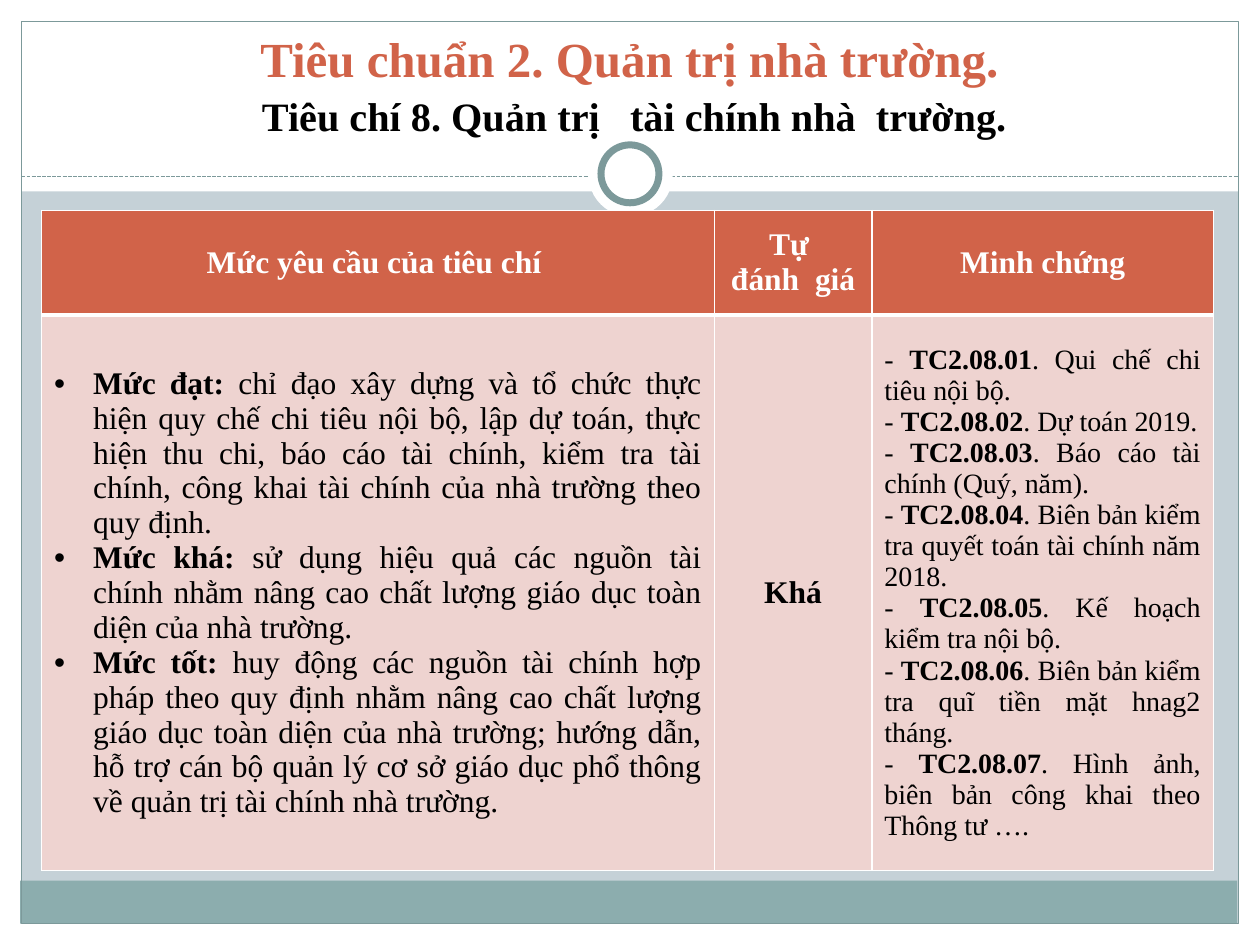
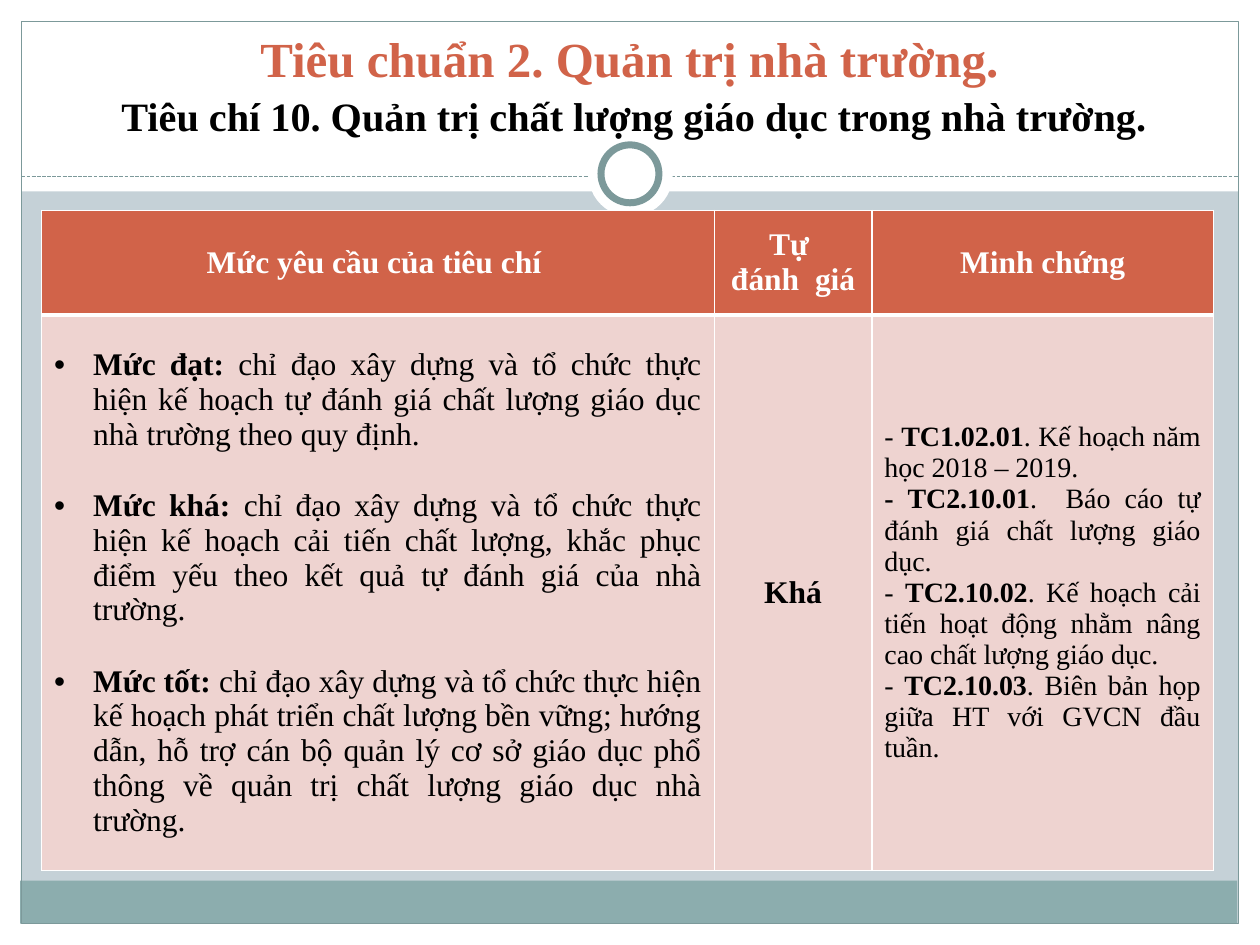
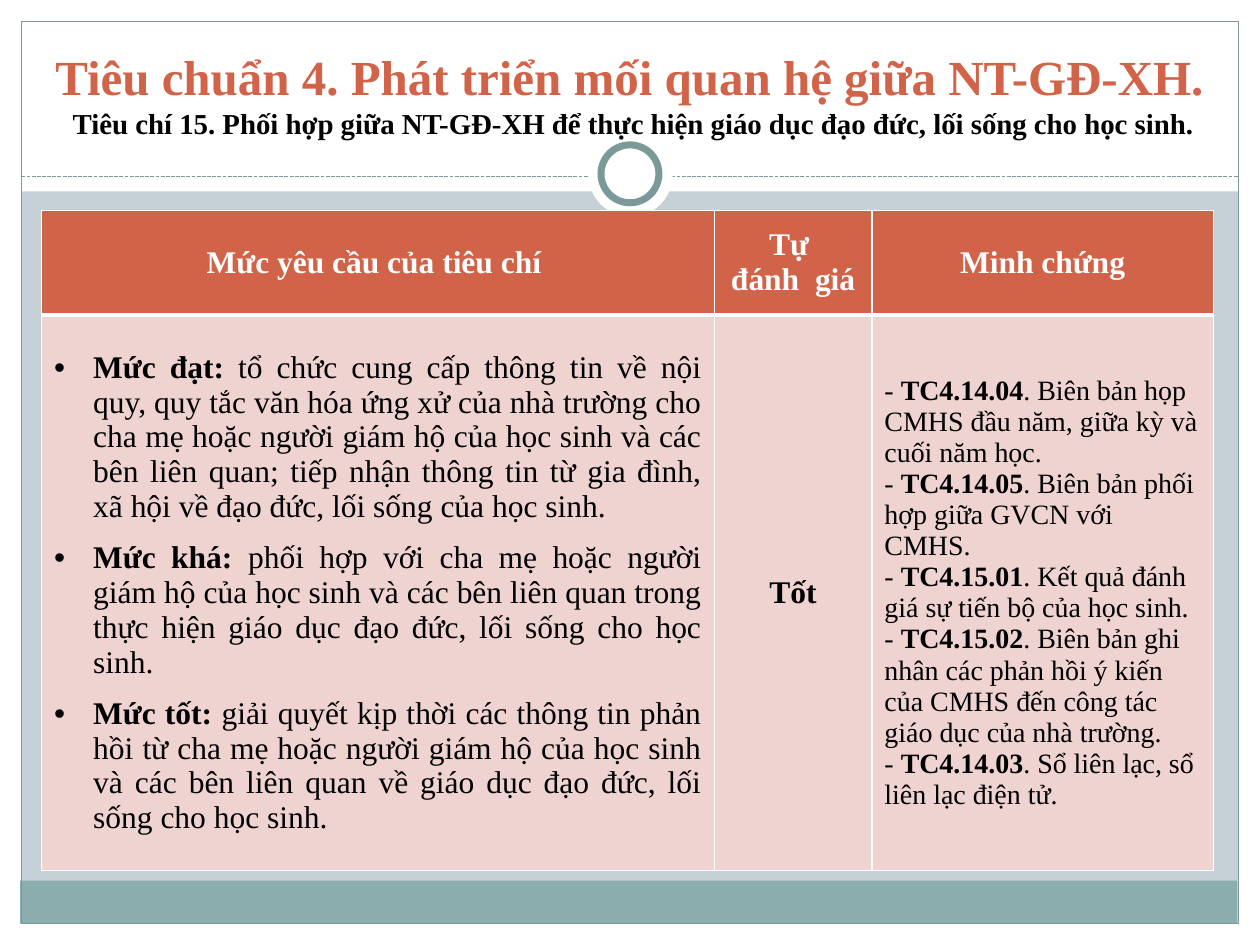
import copy
from dataclasses import dataclass

import pptx
import pptx.dml.color
import pptx.enum.dml
import pptx.enum.shapes
import pptx.enum.text
import pptx.oxml.ns
import pptx.oxml.xmlchemy
import pptx.presentation
import pptx.slide
import pptx.table
import pptx.text.text
import pptx.util

Inches = pptx.util.Inches
Pt = pptx.util.Pt
RGBColor = pptx.dml.color.RGBColor
Align = pptx.enum.text.PP_ALIGN
Preset = pptx.enum.shapes.MSO_SHAPE
OxmlElement = pptx.oxml.xmlchemy.OxmlElement
qn = pptx.oxml.ns.qn

FONT = "Times New Roman"
WHITE = RGBColor(0xFF, 0xFF, 0xFF)
BLACK = RGBColor(0x00, 0x00, 0x00)
ORANGE = RGBColor(0xD1, 0x63, 0x49)
PINK = RGBColor(0xEE, 0xD3, 0xD0)
BACKDROP = RGBColor(0xC5, 0xD1, 0xD7)
TEAL = RGBColor(0x8C, 0xAD, 0xAE)
DARK_TEAL = RGBColor(0x7C, 0x99, 0x9A)

SLIDE_W, SLIDE_H = 10, 7.5
EDGE = 0.17
RULE_Y = 1.4
COLUMN_WIDTHS = (5.34, 1.25, 2.71)
ROW_HEIGHTS = (0.83, 4.41)
HEADINGS = (["Mức yêu cầu của tiêu chí "], ["Tự ", "đánh  giá"], ["Minh chứng"])
LEVEL_NAMES = ("Mức đạt: ", "Mức khá: ", "Mức tốt: ")
BULLET_INDENT = Inches(0.31)
THIN, THICK = 1, 3


@dataclass(frozen=True)
class Decoration:
    left: float
    top: float
    width: float
    height: float
    fill: RGBColor | None = WHITE
    line_width: float = 0
    preset: pptx.enum.shapes.MSO_SHAPE = Preset.RECTANGLE


@dataclass(frozen=True)
class Evidence:
    code: str
    description: str
    bold_dash: bool = False


@dataclass(frozen=True)
class Criterion:
    standard: str
    name: str
    name_size: float
    lead_size: float
    levels: tuple[str, str, str]
    level_gap: float
    rating: str
    evidence: tuple[Evidence, ...]
    evidence_align: pptx.enum.text.PP_ALIGN = Align.JUSTIFY


BANDS = (
    Decoration(0, SLIDE_H - EDGE, SLIDE_W, EDGE),
    Decoration(0, 0, SLIDE_W, 1.52),
    Decoration(0, 0, EDGE, SLIDE_H),
    Decoration(SLIDE_W - EDGE, 0, EDGE, SLIDE_H),
    Decoration(0.16, 6.99, 9.66, 0.34, TEAL),
    Decoration(EDGE, EDGE, SLIDE_W - 2 * EDGE, SLIDE_H - 2 * EDGE, None, 0.75),
)
RING = (
    Decoration(4.67, 1.05, 0.67, 0.67, preset=Preset.OVAL),
    Decoration(4.77, 1.15, 0.46, 0.46, line_width=4, preset=Preset.OVAL),
)

CRITERIA = (
    Criterion(
        "Tiêu chuẩn 2. Quản trị nhà trường.",
        "Tiêu chí 8. Quản trị   tài chính nhà  trường.",
        23, 25,
        (
            "chỉ đạo xây dựng và tổ chức thực hiện quy chế chi tiêu nội bộ, lập dự toán, "
            "thực hiện thu chi, báo cáo tài chính, kiểm tra tài chính, công khai tài chính "
            "của nhà trường theo quy định.",
            "sử dụng hiệu quả các nguồn tài chính nhằm nâng cao chất lượng giáo dục "
            "toàn diện của nhà trường.",
            "huy động các nguồn tài chính hợp pháp theo quy định nhằm nâng cao chất lượng "
            "giáo dục toàn diện của nhà trường; hướng dẫn, hỗ trợ cán bộ quản lý cơ sở "
            "giáo dục phổ thông về quản trị tài chính nhà trường.",
        ),
        0, "Khá",
        (
            Evidence("TC2.08.01", "Qui chế chi tiêu nội bộ."),
            Evidence("TC2.08.02", "Dự toán 2019."),
            Evidence("TC2.08.03", "Báo cáo tài chính (Quý, năm)."),
            Evidence("TC2.08.04", "Biên bản kiểm tra quyết toán tài chính năm 2018."),
            Evidence("TC2.08.05", "Kế hoạch kiểm tra nội bộ."),
            Evidence("TC2.08.06", "Biên bản kiểm tra quĩ tiền mặt hnag2 tháng."),
            Evidence("TC2.08.07", "Hình ảnh, biên bản công khai theo Thông tư …."),
        ),
    ),
    Criterion(
        "Tiêu chuẩn 2. Quản trị nhà trường.",
        "Tiêu chí 10. Quản trị chất lượng giáo dục trong nhà trường.",
        23, 25,
        (
            "chỉ đạo xây dựng và tổ chức thực hiện kế hoạch tự đánh giá chất lượng "
            "giáo dục nhà trường theo quy định.",
            "chỉ đạo xây dựng và tổ chức thực hiện kế hoạch cải tiến chất lượng, khắc phục "
            "điểm yếu theo kết quả tự đánh giá của nhà trường.",
            "chỉ đạo xây dựng và tổ chức thực hiện kế hoạch phát triển chất lượng bền vững; "
            "hướng dẫn, hỗ trợ cán bộ quản lý cơ sở giáo dục phổ thông về quản trị "
            "chất lượng giáo dục nhà trường.",
        ),
        20.7, "Khá",
        (
            Evidence("TC1.02.01", "Kế hoạch năm học 2018 – 2019."),
            Evidence("TC2.10.01", " Báo cáo tự đánh giá chất lượng giáo dục.", bold_dash=True),
            Evidence("TC2.10.02", "Kế hoạch cải tiến hoạt động nhằm nâng cao chất lượng giáo dục."),
            Evidence("TC2.10.03", "Biên bản họp giữa HT với GVCN đầu tuần."),
        ),
    ),
    Criterion(
        "Tiêu chuẩn 4. Phát triển mối quan hệ giữa NT-GĐ-XH.",
        "Tiêu chí 15. Phối hợp giữa NT-GĐ-XH để thực hiện giáo dục đạo đức, "
        "lối sống cho học sinh.",
        16.5, 16.5,
        (
            "tổ chức cung cấp thông tin về nội quy, quy tắc văn hóa ứng xử của nhà trường "
            "cho cha mẹ hoặc người giám hộ của học sinh và các bên liên quan; tiếp nhận "
            "thông tin từ gia đình, xã hội về đạo đức, lối sống của học sinh.",
            "phối hợp với cha mẹ hoặc người giám hộ của học sinh và các bên liên quan "
            "trong thực hiện giáo dục đạo đức, lối sống cho học sinh.",
            "giải quyết kịp thời các thông tin phản hồi từ cha mẹ hoặc người giám hộ của "
            "học sinh và các bên liên quan về giáo dục đạo đức, lối sống cho học sinh.",
        ),
        9.2, "Tốt",
        (
            Evidence("TC4.14.04", "Biên bản họp CMHS đầu năm, giữa kỳ và cuối năm học."),
            Evidence("TC4.14.05", "Biên bản phối hợp giữa GVCN với CMHS."),
            Evidence("TC4.15.01", "Kết quả đánh giá sự tiến bộ của học sinh."),
            Evidence("TC4.15.02", "Biên bản ghi nhân các phản hồi ý kiến của CMHS "
                     "đến công tác giáo dục của nhà trường."),
            Evidence("TC4.14.03", "Sổ liên lạc, sổ liên lạc điện tử."),
        ),
        Align.LEFT,
    ),
)


def add_text(paragraph: pptx.text.text._Paragraph, text: str, *, size: float = 18,
             bold: bool = False, color: RGBColor = BLACK) -> None:
    run = paragraph.add_run()
    run.text = text
    run.font.name = FONT
    run.font.size = Pt(size)
    run.font.bold = bold
    run.font.color.rgb = color


def next_paragraph(frame: pptx.text.text.TextFrame, index: int,
                   align: pptx.enum.text.PP_ALIGN) -> pptx.text.text._Paragraph:
    paragraph = frame.add_paragraph() if index else frame.paragraphs[0]
    paragraph.alignment = align
    return paragraph


def draw_decoration(slide: pptx.slide.Slide, part: Decoration) -> None:
    shape = slide.shapes.add_shape(part.preset, Inches(part.left), Inches(part.top),
                                   Inches(part.width), Inches(part.height))
    shape.shadow.inherit = False
    if part.fill is None:
        shape.fill.background()
    else:
        shape.fill.solid()
        shape.fill.fore_color.rgb = part.fill
    if part.line_width:
        shape.line.color.rgb = DARK_TEAL
        shape.line.width = Pt(part.line_width)
    else:
        shape.line.fill.background()


def draw_dashed_rule(slide: pptx.slide.Slide) -> None:
    rule = slide.shapes.add_connector(
        pptx.enum.shapes.MSO_CONNECTOR.STRAIGHT,
        Inches(EDGE), Inches(RULE_Y), Inches(SLIDE_W - EDGE), Inches(RULE_Y))
    rule.line.color.rgb = DARK_TEAL
    rule.line.width = Pt(0.75)
    rule.line.dash_style = pptx.enum.dml.MSO_LINE.SQUARE_DOT
    rule.element.spPr.append(OxmlElement("a:effectLst"))


def draw_frame(slide: pptx.slide.Slide) -> None:
    slide.background.fill.solid()
    slide.background.fill.fore_color.rgb = BACKDROP
    for band in BANDS:
        draw_decoration(slide, band)
    draw_dashed_rule(slide)
    for circle in RING:
        draw_decoration(slide, circle)


def write_title(slide: pptx.slide.Slide, criterion: Criterion) -> None:
    title = slide.shapes.title
    slide.shapes.element.append(title.element)  # in front of the white band
    title.left, title.top = Inches(0.33), Inches(0.08)
    title.width, title.height = Inches(9.33), Inches(1.08)
    frame = title.text_frame
    frame.word_wrap = True
    frame.auto_size = pptx.enum.text.MSO_AUTO_SIZE.NONE
    frame.vertical_anchor = pptx.enum.text.MSO_ANCHOR.BOTTOM
    heading = next_paragraph(frame, 0, Align.CENTER)
    add_text(heading, criterion.standard, size=28, bold=True, color=ORANGE)
    heading.add_line_break()
    line_break = next(title.element.iter(qn("a:br")))
    line_break.append(copy.deepcopy(line_break.getprevious().find(qn("a:rPr"))))
    add_text(heading, " ", size=criterion.lead_size, bold=True, color=ORANGE)
    add_text(heading, criterion.name, size=criterion.name_size, bold=True)


def style_cell(cell: pptx.table._Cell, fill: RGBColor, top: float, bottom: float) -> None:
    """Set the fill, the white borders and the middle anchor."""
    cell.vertical_anchor = pptx.enum.text.MSO_ANCHOR.MIDDLE
    properties = cell._tc.get_or_add_tcPr()
    for side, width in (("L", THIN), ("R", THIN), ("T", top), ("B", bottom)):
        border = OxmlElement(f"a:ln{side}")
        border.set("w", str(Pt(width)))
        paint = OxmlElement("a:solidFill")
        color = OxmlElement("a:srgbClr")
        color.set("val", str(WHITE))
        paint.append(color)
        border.append(paint)
        properties.append(border)
    cell.fill.solid()
    cell.fill.fore_color.rgb = fill


def add_bullet(paragraph: pptx.text.text._Paragraph) -> None:
    properties = paragraph._p.get_or_add_pPr()
    properties.set("marL", str(BULLET_INDENT))
    properties.set("indent", str(-BULLET_INDENT))
    bullet_font = OxmlElement("a:buFont")
    bullet_font.set("typeface", "Arial")
    bullet = OxmlElement("a:buChar")
    bullet.set("char", "•")
    properties.extend((bullet_font, bullet))


def write_levels(frame: pptx.text.text.TextFrame, criterion: Criterion) -> None:
    for index, (name, requirement) in enumerate(zip(LEVEL_NAMES, criterion.levels)):
        level = next_paragraph(frame, index, Align.JUSTIFY)
        if index:
            level.space_before = Pt(criterion.level_gap)
        add_bullet(level)
        add_text(level, name, bold=True)
        add_text(level, requirement)


def write_evidence(frame: pptx.text.text.TextFrame, criterion: Criterion) -> None:
    for index, item in enumerate(criterion.evidence):
        entry = next_paragraph(frame, index, criterion.evidence_align)
        add_text(entry, "- ", size=16, bold=item.bold_dash)
        add_text(entry, item.code, size=16, bold=True)
        add_text(entry, f". {item.description}", size=16)


def draw_assessment(slide: pptx.slide.Slide, criterion: Criterion) -> None:
    table = slide.shapes.add_table(
        len(ROW_HEIGHTS), len(COLUMN_WIDTHS), Inches(0.33), Inches(1.67),
        Inches(sum(COLUMN_WIDTHS)), Inches(sum(ROW_HEIGHTS))).table
    table.horz_banding = False
    for row, height in zip(table.rows, ROW_HEIGHTS):
        row.height = Inches(height)
    for index, (width, lines) in enumerate(zip(COLUMN_WIDTHS, HEADINGS)):
        table.columns[index].width = Inches(width)
        header = table.cell(0, index)
        style_cell(header, ORANGE, THIN, THICK)
        style_cell(table.cell(1, index), PINK, THICK, THIN)
        for line_index, line in enumerate(lines):
            heading = next_paragraph(header.text_frame, line_index, Align.CENTER)
            add_text(heading, line, bold=True, color=WHITE)
    levels, rating, evidence = (cell.text_frame for cell in table.rows[1].cells)
    write_levels(levels, criterion)
    add_text(next_paragraph(rating, 0, Align.CENTER), criterion.rating, bold=True)
    write_evidence(evidence, criterion)


def add_criterion_slide(deck: pptx.presentation.Presentation, criterion: Criterion) -> None:
    slide = deck.slides.add_slide(deck.slide_layouts.get_by_name("Title Only"))
    draw_frame(slide)
    write_title(slide, criterion)
    draw_assessment(slide, criterion)


def main() -> None:
    deck = pptx.Presentation()
    deck.slide_width, deck.slide_height = Inches(SLIDE_W), Inches(SLIDE_H)
    for criterion in CRITERIA:
        add_criterion_slide(deck, criterion)
    deck.save("out.pptx")


if __name__ == "__main__":
    main()
